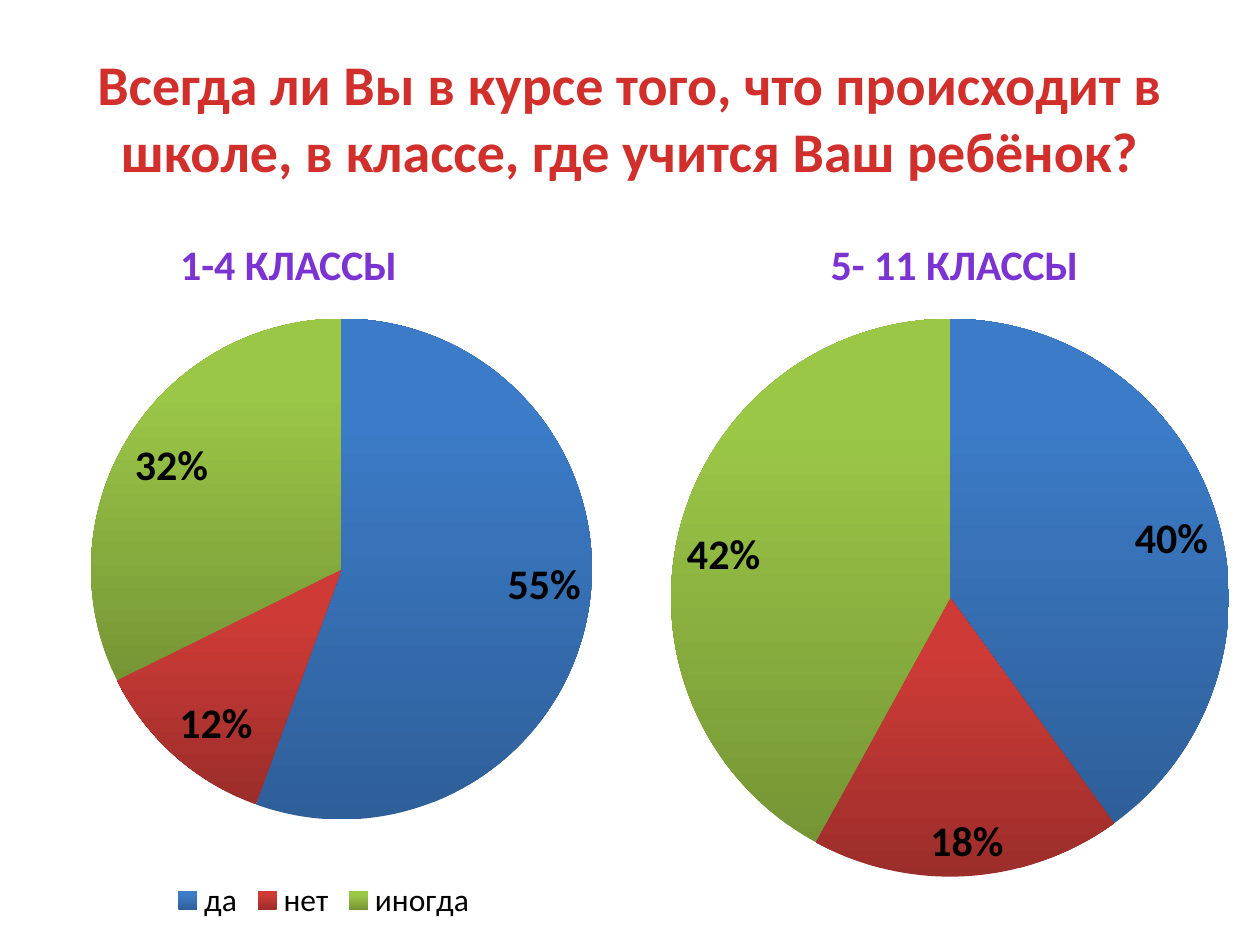
from lxml import etree
from pptx import Presentation
from pptx import util as u
from pptx.chart.data import CategoryChartData
from pptx.dml.color import RGBColor
from pptx.enum import chart as ch, text as tx
from pptx.oxml import ns

WIDE, HIGH = 10, 7.5
FONT = "Calibri"
SLICES = [("2E5F99", "3C7BC7"), ("9B2D2A", "CE3B37"), ("769535", "9BC747")]


def color(code):
    return RGBColor.from_string(code)


def box(left, top, wide, high):
    return [u.Inches(n) for n in (left, top, wide, high)]


def style(font, size, code, bold=False):
    font.name = FONT
    font.size = u.Pt(size)
    font.bold = bold
    font.color.rgb = color(code)


def write(holder, words, at, size, code, anchor):
    holder.left, holder.top, holder.width, holder.height = box(*at)
    frame = holder.text_frame
    frame.word_wrap = True
    frame.vertical_anchor = anchor
    para = frame.paragraphs[0]
    para.alignment = tx.PP_ALIGN.CENTER
    run = para.add_run()
    run.text = words
    style(run.font, size, code, bold=True)


def shade(fill, dark, light):
    fill.gradient()
    fill.gradient_angle = 90
    low, top = fill.gradient_stops
    low.color.rgb, top.color.rgb = color(dark), color(light)
    low.position, top.position = 0, 0.8


def place(chart, shares):
    area = chart._chartSpace.chart.plotArea
    for old in area.findall(ns.qn("c:layout")):
        area.remove(old)
    layout = etree.Element(ns.qn("c:layout"))
    manual = etree.SubElement(layout, ns.qn("c:manualLayout"))
    rules = [("layoutTarget", "inner"), ("xMode", "edge"), ("yMode", "edge")]
    for tag, val in rules + list(zip("xywh", shares)):
        etree.SubElement(manual, ns.qn(f"c:{tag}")).set("val", str(val))
    area.insert(0, layout)


def add_pie(slide, at, names, values, shares, legend=False):
    data = CategoryChartData()
    data.categories = names
    data.add_series("Series 1", values)
    chart = slide.shapes.add_chart(ch.XL_CHART_TYPE.PIE, *box(*at), data).chart
    chart.has_title = False
    style(chart.font, 18, "000000")
    chart.has_legend = legend
    if legend:
        chart.legend.position = ch.XL_LEGEND_POSITION.BOTTOM
        chart.legend.include_in_layout = False
    plot = chart.plots[0]
    plot.vary_by_categories = True
    for i, pair in enumerate(SLICES):
        shade(plot.series[0].points[i].format.fill, *pair)
    plot.has_data_labels = True
    labels = plot.data_labels
    labels.show_value = True
    labels.number_format = '0"%"'
    labels.number_format_is_linked = False
    labels.position = ch.XL_LABEL_POSITION.INSIDE_END
    style(labels.font, 24, "000000", bold=True)
    place(chart, shares)


def main():
    deck = Presentation()
    deck.slide_width, deck.slide_height = u.Inches(WIDE), u.Inches(HIGH)
    slide = deck.slides.add_slide(deck.slide_layouts[4])
    holders = {h.placeholder_format.idx: h for h in slide.placeholders}
    write(holders[0], "Всегда ли Вы в курсе того, что происходит в школе, "
          "в классе, где учится Ваш ребёнок?",
          (0.05 * WIDE, 0.04 * HIGH, 0.9 * WIDE, 1.25),
          32, "D02F2C", tx.MSO_ANCHOR.MIDDLE)
    heads = [(1, "1-4 КЛАССЫ", 0.55, 3.48), (3, "5- 11 КЛАССЫ", 5.7, 3.75)]
    for idx, words, left, wide in heads:
        write(holders[idx], words, (left, 1.64, wide, 0.7),
              24, "7B34D2", tx.MSO_ANCHOR.BOTTOM)
    for idx in (2, 4):
        node = holders[idx].element
        node.getparent().remove(node)
    add_pie(slide, (0.23, 2.38, 4.68, 4.97), ["да", "нет", "иногда"],
            [55, 12, 32], (0.1, 0.03, 0.86, 0.8), legend=True)
    add_pie(slide, (5.08, 2.38, 4.92, 4.73), ["1", "2", "3"],
            [40, 18, 42], (0.05, 0.03, 0.9, 0.94))
    deck.save("out.pptx")


if __name__ == "__main__":
    main()
